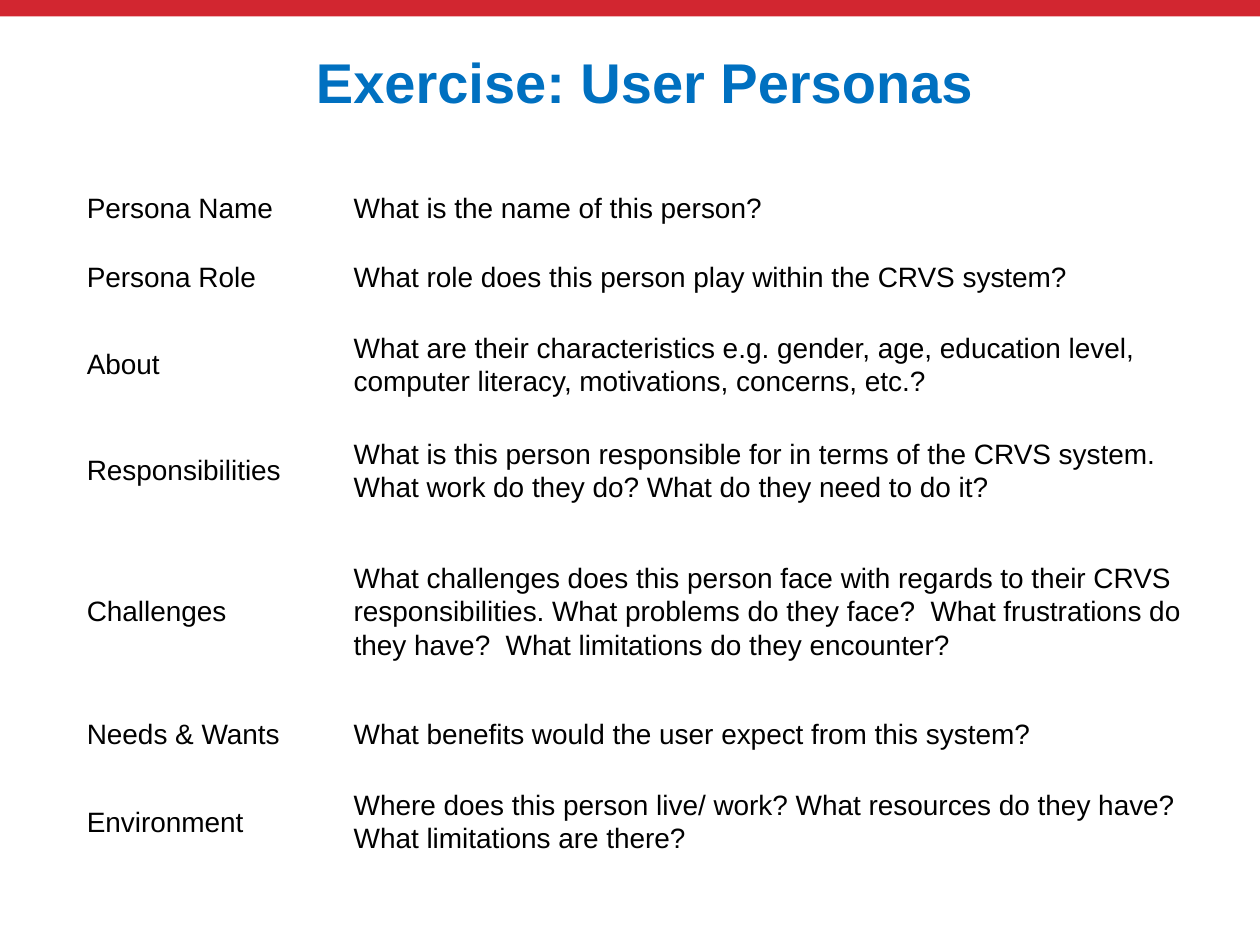
import pptx
import pptx.dml.color
import pptx.enum.shapes
import pptx.enum.text
import pptx.util
from pptx.util import Cm, Pt

FONT = "Arial"
HUES = {"band": "D22630", "title": "0070C0", "text": "000000"}
LEFT = 1.57
COLS = (5.38, 17.32)
# Row height in cm, label, question
ROWS = [
    (1.4, "Persona Name", "What is the name of this person?"),
    (1.4, "Persona Role",
     "What role does this person play within the CRVS system?"),
    (2.13, "About",
     "What are their characteristics e.g. gender, age, education level, "
     "computer literacy, motivations, concerns, etc.?"),
    (2.13, "Responsibilities",
     "What is this person responsible for in terms of the CRVS system. "
     "What work do they do? What do they need to do it?"),
    (3.56, "Challenges",
     "What challenges does this person face with regards to their CRVS "
     "responsibilities. What problems do they face?  What frustrations do "
     "they have?  What limitations do they encounter?"),
    (1.4, "Needs & Wants",
     "What benefits would the user expect from this system?"),
    (2.13, "Environment",
     "Where does this person live/ work? What resources do they have? "
     "What limitations are there?"),
]


def color(name):
    return pptx.dml.color.RGBColor.from_string(HUES[name])


def add_run(para, text, size, hue, bold=False):
    run = para.add_run()
    run.text = text
    font = run.font
    font.name, font.size, font.bold = FONT, Pt(size), bold
    font.color.rgb = color(hue)


def add_band(slide, width):
    band = slide.shapes.add_shape(
        pptx.enum.shapes.MSO_SHAPE.RECTANGLE, 0, 0, width, Cm(0.33))
    band.shadow.inherit = False
    band.fill.solid()
    band.fill.fore_color.rgb = color("band")
    band.line.fill.background()


def add_title(slide, text):
    box = slide.shapes.add_textbox(Cm(LEFT), Cm(0.84), Cm(22.86), Cm(3.18))
    frame = box.text_frame
    frame.word_wrap = True
    para = frame.paragraphs[0]
    para.alignment = pptx.enum.text.PP_ALIGN.CENTER
    add_run(para, text, 32, "title", bold=True)


def fill_cell(cell, text):
    cell.fill.background()
    cell.vertical_anchor = pptx.enum.text.MSO_ANCHOR.MIDDLE
    cell.margin_left = cell.margin_right = Cm(0.18)
    cell.margin_top = cell.margin_bottom = 0
    para = cell.text_frame.paragraphs[0]
    para.line_spacing = 1.07
    add_run(para, text, 16, "text")


def add_grid(slide):
    high = sum(row[0] for row in ROWS)
    table = slide.shapes.add_table(
        len(ROWS), len(COLS), Cm(LEFT), Cm(3.48),
        Cm(sum(COLS)), Cm(high)).table
    table.first_row = table.horz_banding = False
    for col, width in zip(table.columns, COLS):
        col.width = Cm(width)
    for row, (height, *texts) in zip(table.rows, ROWS):
        row.height = Cm(height)
        for cell, text in zip(row.cells, texts):
            fill_cell(cell, text)


def main():
    deck = pptx.Presentation()
    deck.slide_width, deck.slide_height = Cm(25.4), Cm(19.05)
    slide = deck.slides.add_slide(deck.slide_layouts[6])
    add_title(slide, "Exercise: User Personas")
    add_band(slide, deck.slide_width)
    add_grid(slide)
    deck.save("out.pptx")


if __name__ == "__main__":
    main()
